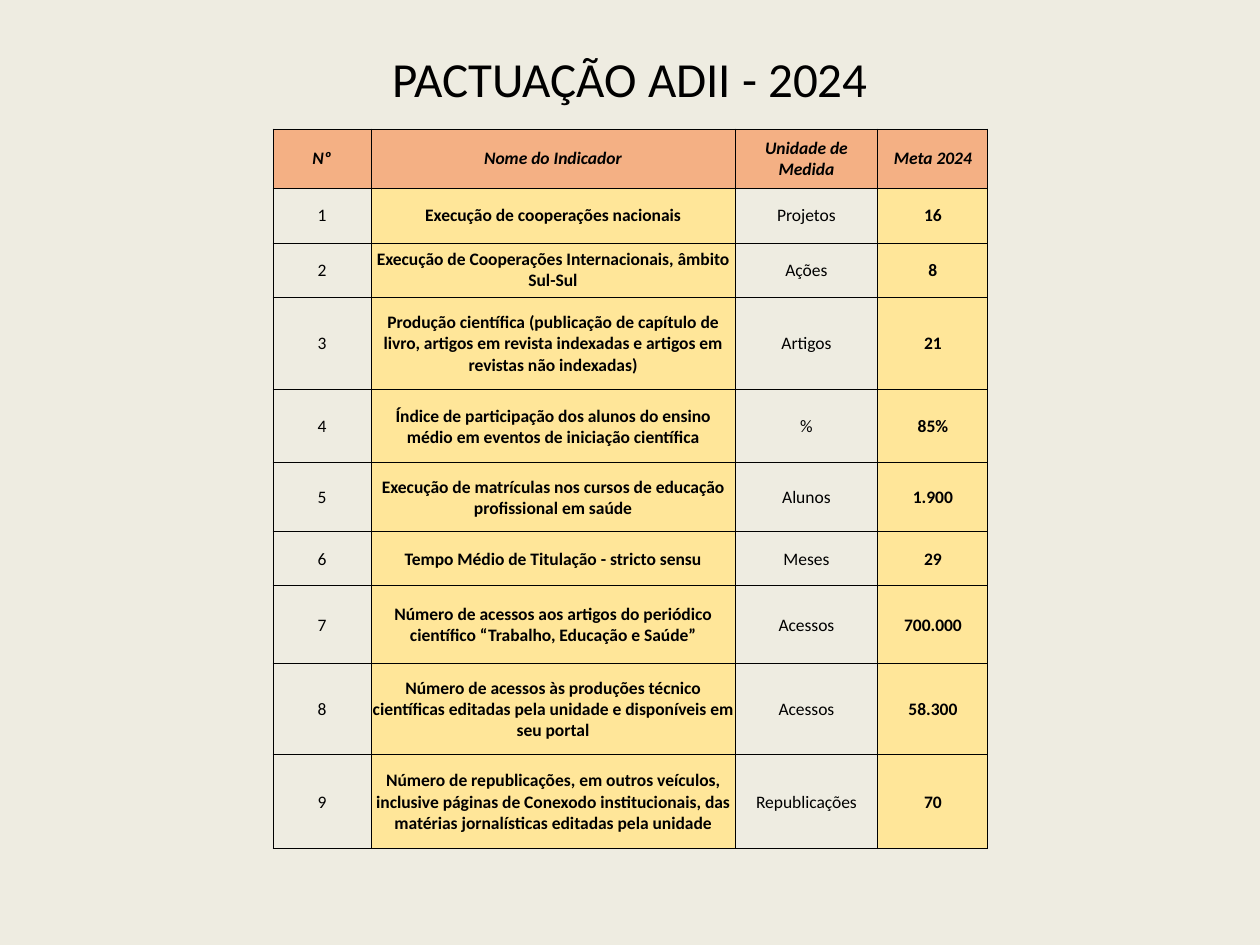
import pptx
import pptx.util
import pptx.dml.color
import pptx.enum.text
import pptx.oxml
import lxml.etree

TITLE = "PACTUAÇÃO ADII - 2024"
HEADER = ("Nº", "Nome do Indicador", "Unidade de Medida", "Meta 2024")
INDICATORS = [
    ("Execução de cooperações nacionais", "Projetos", "16"),
    ("Execução de Cooperações Internacionais, âmbito Sul-Sul", "Ações", "8"),
    ("Produção científica (publicação de capítulo de livro, artigos em revista "
     "indexadas e artigos em revistas não indexadas)", "Artigos", "21"),
    ("Índice de participação dos alunos do ensino médio em eventos de iniciação "
     "científica", "%", "85%"),
    ("Execução de matrículas nos cursos de educação profissional em saúde", "Alunos", "1.900"),
    ("Tempo Médio de Titulação - stricto sensu", "Meses", "29"),
    ("Número de acessos aos artigos do periódico científico “Trabalho, Educação e "
     "Saúde”", "Acessos", "700.000"),
    ("Número de acessos às produções técnico científicas editadas pela unidade e "
     "disponíveis em seu portal", "Acessos", "58.300"),
    ("Número de republicações, em outros veículos, inclusive páginas de Conexodo "
     "institucionais, das matérias jornalísticas editadas pela unidade",
     "Republicações", "70"),
]
COL_WIDTHS = [98, 364, 143, 110]
ROW_HEIGHTS = [59, 55, 54, 93, 73, 69, 54, 78, 91, 94]
FONT = "Calibri"
BLACK, PAPER, ORANGE, YELLOW = "000000", "EEECE1", "F4B084", "FFE699"
MIDDLE = pptx.enum.text.MSO_ANCHOR.MIDDLE


def px(n):
    return pptx.util.Emu(round(n * 914400 / 126))


def color(value):
    return pptx.dml.color.RGBColor.from_string(value)


def style(p, size, bold=False, italic=False):
    p.alignment = pptx.enum.text.PP_ALIGN.CENTER
    for r in p.runs:
        r.font.name = FONT
        r.font.size = pptx.util.Pt(size)
        r.font.bold = bold
        r.font.italic = italic
        r.font.color.rgb = color(BLACK)


def add_borders(cell):
    tcPr = cell._tc.get_or_add_tcPr()
    for i, side in enumerate(("lnL", "lnR", "lnT", "lnB")):
        ln = pptx.oxml.parse_xml(
            f'<a:{side} xmlns:a="http://schemas.openxmlformats.org/drawingml/2006/main" '
            f'w="6350"><a:solidFill><a:srgbClr val="{BLACK}"/></a:solidFill></a:{side}>')
        tcPr.insert(i, ln)


def fill_cell(cell, text, fill, bold, italic):
    cell.text_frame.text = text
    style(cell.text_frame.paragraphs[0], 10, bold, italic)
    cell.vertical_anchor = MIDDLE
    cell.margin_left = cell.margin_right = cell.margin_top = px(1)
    cell.margin_bottom = 0
    if fill:
        cell.fill.solid()
        cell.fill.fore_color.rgb = color(fill)
    else:
        cell.fill.background()
    add_borders(cell)


prs = pptx.Presentation()
prs.slide_width, prs.slide_height = px(1260), px(945)
s = prs.slides.add_slide(prs.slide_layouts[6])
s.background.fill.solid()
s.background.fill.fore_color.rgb = color(PAPER)

tf = s.shapes.add_textbox(px(63), px(38), px(1134), px(87)).text_frame
tf.word_wrap = True
tf.vertical_anchor = MIDDLE
tf.text = TITLE
tf.paragraphs[0].line_spacing = 0.9
style(tf.paragraphs[0], 28)

rows = [HEADER] + [(str(n), *row) for n, row in enumerate(INDICATORS, 1)]
table = s.shapes.add_table(len(rows), len(HEADER), px(273), px(129),
                           px(sum(COL_WIDTHS)), px(sum(ROW_HEIGHTS))).table
for col, width in zip(table.columns, COL_WIDTHS):
    col.width = px(width)
for row, height in zip(table.rows, ROW_HEIGHTS):
    row.height = px(height)
for i, row in enumerate(rows):
    for j, text in enumerate(row):
        is_header, is_key = i == 0, j in (1, 3)
        fill = ORANGE if is_header else YELLOW if is_key else None
        fill_cell(table.cell(i, j), text, fill, is_header or is_key, is_header)

prs.save("out.pptx")
